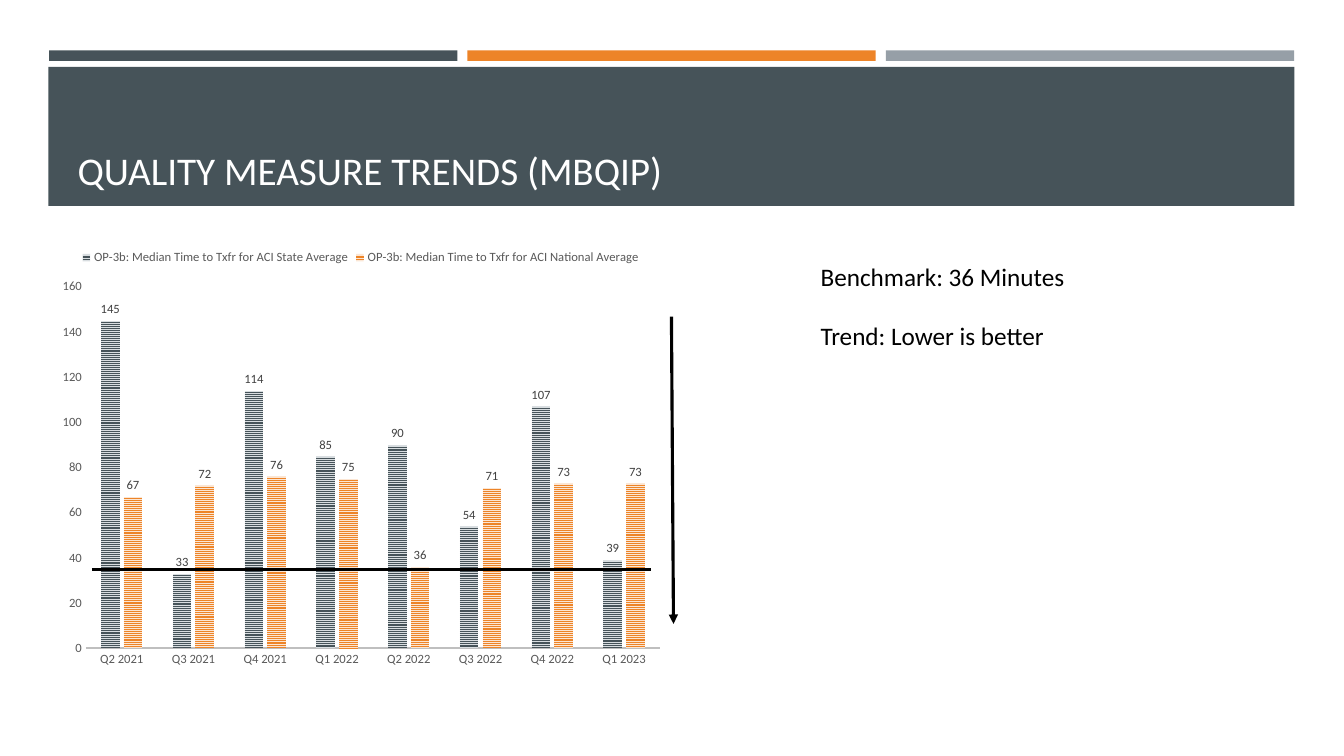
from lxml.etree import SubElement
from pptx import Presentation
from pptx.chart.data import CategoryChartData
from pptx.dml.color import RGBColor
from pptx.enum.chart import XL_CHART_TYPE, XL_LABEL_POSITION, XL_LEGEND_POSITION, XL_TICK_MARK
from pptx.enum.dml import MSO_PATTERN
from pptx.enum.shapes import MSO_CONNECTOR, MSO_SHAPE
from pptx.enum.text import MSO_ANCHOR
from pptx.oxml.ns import qn
from pptx.util import Inches, Pt

WIDE, HIGH = 13.33, 7.5
SLATE, AMBER, GRAY = "465359", "ED8428", "969FA7"
FONT = "Calibri"
TERMS = ["Q2 2021", "Q3 2021", "Q4 2021", "Q1 2022",
         "Q2 2022", "Q3 2022", "Q4 2022", "Q1 2023"]
SERIES = [
    ("OP-3b: Median Time to Txfr for ACI State Average",
     (145, 33, 114, 85, 90, 54, 107, 39), SLATE, "D8DDE0"),
    ("OP-3b: Median Time to Txfr for ACI National Average",
     (67, 72, 76, 75, 36, 71, 73, 73), AMBER, "FBE6D4"),
]


def color(code):
    return RGBColor.from_string(code)


def across(share):
    return Inches(WIDE * share / 100)


def down(share):
    return Inches(HIGH * share / 100)


def place(x, y, w, h):
    return across(x), down(y), across(w), down(h)


def style(font, size, code):
    font.name, font.size = FONT, Pt(size)
    font.color.rgb = color(code)


def add_bar(slide, box, code):
    bar = slide.shapes.add_shape(MSO_SHAPE.RECTANGLE, *place(*box))
    bar.shadow.inherit = False
    bar.fill.solid()
    bar.fill.fore_color.rgb = color(code)
    bar.line.fill.background()


def add_text(slide, box, text, size, code, anchor=MSO_ANCHOR.TOP, gap=0):
    frame = slide.shapes.add_textbox(*place(*box)).text_frame
    frame.word_wrap = True
    frame.vertical_anchor = anchor
    frame.text = text
    for item in frame.paragraphs:
        item.space_after = Pt(gap)
        for run in item.runs:
            style(run.font, size, code)


def add_line(slide, start, end, width, arrow=False):
    line = slide.shapes.add_connector(
        MSO_CONNECTOR.STRAIGHT, across(start[0]), down(start[1]),
        across(end[0]), down(end[1]))
    line.line.color.rgb = color("000000")
    line.line.width = Pt(width)
    if arrow:
        SubElement(line.line._get_or_add_ln(), qn("a:tailEnd"), type="triangle")
    SubElement(line._element.spPr, qn("a:effectLst"))


def set_plot(chart, **shares):
    area = chart._chartSpace.chart.plotArea
    for old in area.findall(qn("c:layout")):
        area.remove(old)
    layout = SubElement(area, qn("c:layout"))
    area.insert(0, layout)
    manual = SubElement(layout, qn("c:manualLayout"))
    SubElement(manual, qn("c:layoutTarget"), val="inner")
    for mode in ("xMode", "yMode"):
        SubElement(manual, qn("c:" + mode), val="edge")
    for name, share in shares.items():
        SubElement(manual, qn("c:" + name), val=str(share))


def set_axis(axis):
    axis.has_major_gridlines = False
    axis.major_tick_mark = axis.minor_tick_mark = XL_TICK_MARK.NONE
    style(axis.tick_labels.font, 9, "595959")


def paint(series, front, back):
    fill = series.format.fill
    fill.patterned()
    fill.pattern = MSO_PATTERN.NARROW_HORIZONTAL
    fill.fore_color.rgb = color(front)
    fill.back_color.rgb = color(back)
    series.invert_if_negative = False
    labels = series.data_labels
    labels.show_value = True
    labels.position = XL_LABEL_POSITION.OUTSIDE_END
    style(labels.font, 9, "404040")


def add_trend(slide, box):
    data = CategoryChartData()
    data.categories = TERMS
    for name, values, _, _ in SERIES:
        data.add_series(name, values)
    chart = slide.shapes.add_chart(
        XL_CHART_TYPE.COLUMN_CLUSTERED, *place(*box), data).chart
    style(chart.font, 10, "000000")
    chart.has_title = False
    chart.has_legend = True
    chart.legend.position = XL_LEGEND_POSITION.TOP
    chart.legend.include_in_layout = False
    style(chart.legend.font, 9, "595959")
    plot = chart.plots[0]
    plot.gap_width, plot.overlap, plot.vary_by_categories = 164, -22, False
    for series, (_, _, front, back) in zip(plot.series, SERIES):
        paint(series, front, back)
    base, scale = chart.category_axis, chart.value_axis
    set_axis(base)
    base.format.line.color.rgb = color("BFBFBF")
    base.format.line.width = Pt(1.5)
    set_axis(scale)
    scale.format.line.fill.background()
    scale.minimum_scale, scale.maximum_scale, scale.major_unit = 0, 160, 20
    set_plot(chart, x=0.06, y=0.11, w=0.92, h=0.83)


def main():
    deck = Presentation()
    deck.slide_width, deck.slide_height = Inches(WIDE), Inches(HIGH)
    slide = deck.slides.add_slide(deck.slide_layouts[6])
    for step, code in enumerate((SLATE, AMBER, GRAY)):
        add_bar(slide, (3.65 + 31.13 * step, 6.67, 30.38, 1.4), code)
    add_bar(slide, (3.6, 8.85, 92.72, 18.4), SLATE)
    add_text(slide, (5.03, 17.9, 52.44, 8.4), "QUALITY MEASURE TRENDS (MBQIP)",
             28, "FFFFFF", MSO_ANCHOR.BOTTOM)
    add_text(slide, (60.32, 33.87, 36.08, 25.6),
             "Benchmark: 36 Minutes\nTrend: Lower is better", 18, "000000", gap=21)
    add_trend(slide, (3.6, 31.6, 46.44, 57.6))
    add_line(slide, (6.83, 75.33), (48.46, 75.33), 1.5)
    add_line(slide, (49.96, 41.87), (50.11, 82.53), 2.25, arrow=True)
    deck.save("out.pptx")


if __name__ == "__main__":
    main()
